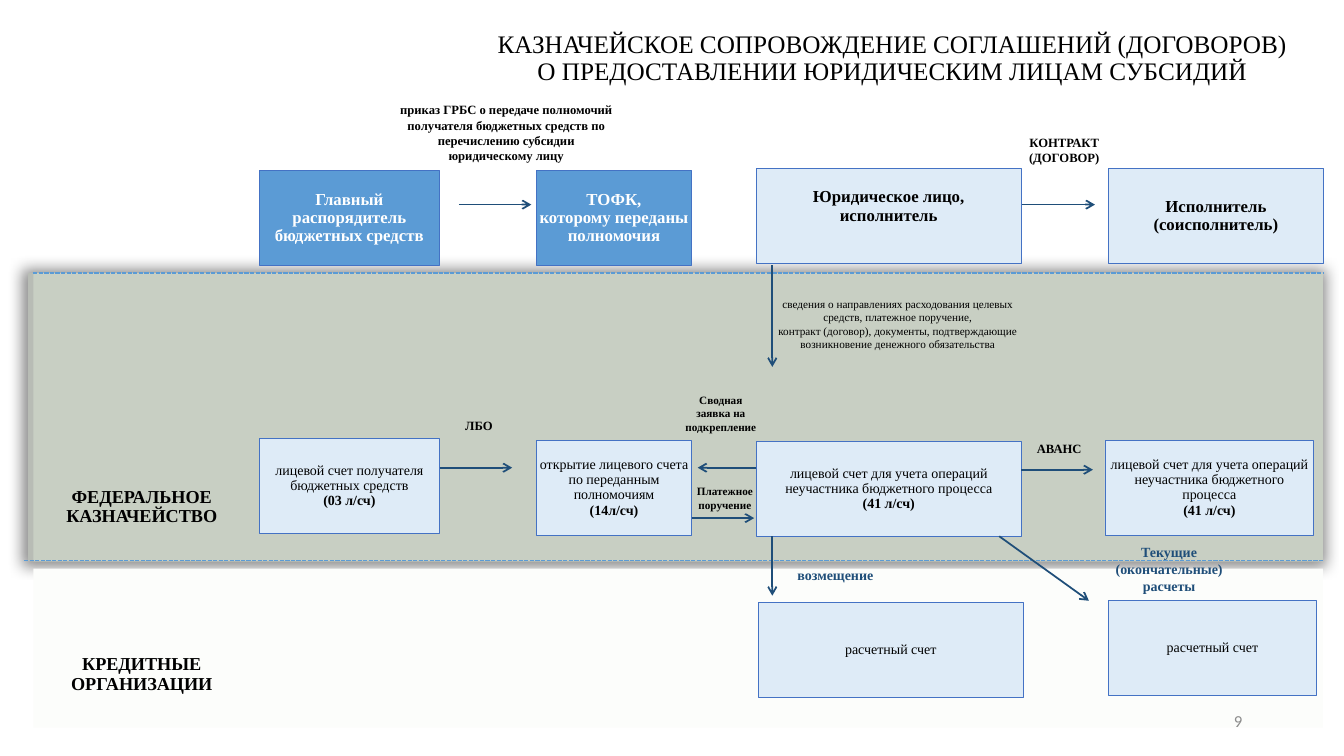
from lxml.etree import SubElement
from pptx import Presentation
from pptx.dml.color import RGBColor
from pptx.enum.dml import MSO_LINE
from pptx.enum.shapes import MSO_CONNECTOR, MSO_SHAPE
from pptx.enum.text import MSO_ANCHOR, PP_ALIGN
from pptx.oxml.ns import qn
from pptx.util import Inches, Pt

BLACK = RGBColor(0x00, 0x00, 0x00)
WHITE = RGBColor(0xFF, 0xFF, 0xFF)
GREY = RGBColor(0x8C, 0x8C, 0x8C)
NAVY = RGBColor(0x1F, 0x4E, 0x79)
BLUE = RGBColor(0x5B, 0x9B, 0xD5)
PALE = RGBColor(0xDE, 0xEB, 0xF7)
BORDER = RGBColor(0x44, 0x72, 0xC4)
SAGE = RGBColor(0xC8, 0xCF, 0xC3)
SAGE_EDGE = RGBColor(0xB8, 0xBC, 0xB5)
IVORY = RGBColor(0xFC, 0xFD, 0xFB)
SERIF = "Times New Roman"

# Text formats
HEADING = dict(size=Pt(18), bold=False, color=BLACK)
LANE = dict(size=Pt(13), bold=True, color=BLACK)
AGENCY = dict(size=Pt(12), bold=True, color=WHITE)
PARTY = dict(size=Pt(12), bold=True, color=BLACK)
ACCOUNT = dict(size=Pt(10), bold=False, color=BLACK)
LABEL = dict(size=Pt(9), bold=True, color=BLACK)
SMALL_LABEL = dict(size=Pt(8), bold=True, color=BLACK)
NOTE = dict(size=Pt(8), bold=False, color=BLACK)
PAYMENT = dict(size=Pt(10), bold=True, color=NAVY)
PAGE = dict(size=Pt(12), bold=False, color=GREY, name="Calibri")

# Lanes: left, top, width, height, fill, shadow
LANES = [
    (0.28, 2.71, 12.79, 2.86, SAGE_EDGE, True),
    (0.33, 5.64, 12.79, 1.58, IVORY, False),
    (0.33, 2.71, 12.79, 2.86, SAGE, False),
]
LANE_BORDERS = [(0.33, 2.71), (0.24, 5.56)]
LANE_END = 13.12

# Columns: left, width
COLUMNS = dict(chief=(2.57, 1.79), treasury=(5.32, 1.54),
               company=(7.5, 2.63), contractor=(10.99, 2.14))
BOX_HEIGHT = 0.94
OPERATIONS = "лицевой счет для учета операций неучастника бюджетного процесса"

# Boxes: column, shift, top, width change, fill, format, lines, account number
BOXES = [
    ("chief", 0, 1.69, 0, BLUE, AGENCY,
     ["Главный распорядитель бюджетных средств"], None),
    ("treasury", 0, 1.69, 0, BLUE, AGENCY,
     ["ТОФК,", "которому переданы полномочия"], None),
    ("company", 0, 1.67, 0, PALE, PARTY,
     ["Юридическое лицо,", "исполнитель"], None),
    ("contractor", 0, 1.67, 0, PALE, PARTY,
     ["Исполнитель (соисполнитель)"], None),
    ("chief", 0, 4.35, 0, PALE, ACCOUNT,
     ["лицевой счет получателя бюджетных средств"], "(03 л/сч)"),
    ("treasury", 0, 4.37, 0, PALE, ACCOUNT,
     ["открытие лицевого счета по переданным полномочиям"], "(14л/сч)"),
    ("company", 0, 4.38, 0, PALE, ACCOUNT, [OPERATIONS], "(41 л/сч)"),
    ("contractor", -0.03, 4.37, -0.07, PALE, ACCOUNT, [OPERATIONS], "(41 л/сч)"),
    ("company", 0.02, 5.98, 0, PALE, ACCOUNT, ["расчетный счет"], None),
    ("contractor", 0, 5.96, -0.07, PALE, ACCOUNT, ["расчетный счет"], None),
]
RAISED_BOX = "Юридическое лицо,"

# Labels: left, top, width, height, format, lines, bottom inset
LABELS = [
    (0.33, 4.56, 2.15, 0.94, LANE, ["ФЕДЕРАЛЬНОЕ КАЗНАЧЕЙСТВО"], 0.05),
    (0.33, 6.16, 2.15, 1.07, LANE, ["КРЕДИТНЫЕ ОРГАНИЗАЦИИ"], 0.05),
    (4.65, 0.26, 8.4, 0.65, HEADING,
     ["КАЗНАЧЕЙСКОЕ СОПРОВОЖДЕНИЕ СОГЛАШЕНИЙ (ДОГОВОРОВ)",
      "О ПРЕДОСТАВЛЕНИИ ЮРИДИЧЕСКИМ ЛИЦАМ СУБСИДИЙ"], 0.05),
    (3.82, 0.96, 2.4, 0.71, LABEL,
     ["приказ ГРБС о передаче полномочий получателя бюджетных средств по "
      "перечислению субсидии юридическому лицу"], 0.05),
    (10.03, 1.21, 1.05, 0.56, LABEL, ["КОНТРАКТ (ДОГОВОР)"], 0.05),
    (4.42, 4.04, 0.66, 0.52, LABEL, ["ЛБО"], 0.2),
    (10.08, 4.37, 0.85, 0.31, LABEL, ["АВАНС"], 0.2),
    (6.68, 3.82, 0.94, 0.56, SMALL_LABEL,
     ["Сводная", "заявка на подкрепление"], 0.05),
    (6.72, 4.66, 0.94, 0.56, SMALL_LABEL, ["Платежное поручение"], 0.05),
    (7.48, 2.9, 2.85, 0.63, NOTE,
     ["сведения о направлениях расходования целевых средств, платежное поручение,",
      "контракт (договор), документы, подтверждающие возникновение денежного "
      "обязательства"], 0.05),
    (7.76, 5.6, 1.05, 0.21, PAYMENT, ["возмещение"], 0.05),
    (10.8, 5.5, 1.59, 0.29, PAYMENT, ["Текущие (окончательные) расчеты"], 0.05),
    (9.42, 6.95, 3, 0.4, PAGE, ["9"], 0.05),
]

# Arrows: from x, from y, to x, to y
ARROWS = [
    (4.55, 2.03, 5.27, 2.03), (10.14, 2.03, 10.86, 2.03),
    (10.13, 4.66, 10.84, 4.66), (6.86, 5.14, 7.48, 5.14),
    (4.36, 4.64, 5.08, 4.64), (7.5, 4.64, 6.92, 4.64),
    (9.91, 5.32, 10.8, 5.96), (7.66, 2.63, 7.66, 3.64),
    (7.66, 5.32, 7.66, 5.91),
]


def add_lines(frame, lines, text_format, spacing, account=None):
    """Fill a text frame with centred paragraphs, the account number in bold."""
    frame.word_wrap = True
    frame.vertical_anchor = MSO_ANCHOR.MIDDLE
    rows = [(line, text_format["bold"]) for line in lines]
    if account:
        rows.append((account, True))
    for index, (line, bold) in enumerate(rows):
        paragraph = frame.add_paragraph() if index else frame.paragraphs[0]
        paragraph.alignment = PP_ALIGN.RIGHT if text_format is PAGE else PP_ALIGN.CENTER
        paragraph.line_spacing = spacing
        run = paragraph.add_run()
        run.text = line
        for key, value in {"name": SERIF, **text_format, "bold": bold}.items():
            if key == "color":
                run.font.color.rgb = value
            else:
                setattr(run.font, key, value)


def add_rectangle(shapes, left, top, width, height, fill, border=None):
    rectangle = shapes.add_shape(MSO_SHAPE.RECTANGLE, *map(Inches, (left, top, width, height)))
    rectangle.shadow.inherit = False
    rectangle.fill.solid()
    rectangle.fill.fore_color.rgb = fill
    if border:
        rectangle.line.color.rgb = border
        rectangle.line.width = Pt(0.5)
    else:
        rectangle.line.fill.background()
    return rectangle


def add_glow_shadow(lane):
    """Give a lane a soft dark shadow on every side."""
    effects = lane._element.spPr.find(qn("a:effectLst"))
    shadow = SubElement(effects, qn("a:outerShdw"), blurRad=str(Inches(0.14)),
                        dist="0", sx="101000", sy="103000", algn="ctr", rotWithShape="0")
    black = SubElement(shadow, qn("a:srgbClr"), val="000000")
    SubElement(black, qn("a:alpha"), val="45000")


def add_line(shapes, ends, color, width):
    line = shapes.add_connector(MSO_CONNECTOR.STRAIGHT, *map(Inches, ends))
    line.line.color.rgb = color
    line.line.width = Pt(width)
    SubElement(line._element.spPr, qn("a:effectLst"))
    return line


def main():
    deck = Presentation()
    deck.slide_width, deck.slide_height = Inches(13.33), Inches(7.5)
    shapes = deck.slides.add_slide(deck.slide_layouts[6]).shapes

    for *place, fill, shadowed in LANES:
        lane = add_rectangle(shapes, *place, fill)
        if shadowed:
            add_glow_shadow(lane)

    for left, y in LANE_BORDERS:
        border = add_line(shapes, (left, y, LANE_END, y), BLUE, 1)
        border.line.dash_style = MSO_LINE.SQUARE_DOT

    for column, shift, top, change, fill, text_format, lines, account in BOXES:
        left, width = COLUMNS[column]
        box = add_rectangle(shapes, left + shift, top, width + change, BOX_HEIGHT, fill, BORDER)
        frame = box.text_frame
        for side in ("left", "top", "right", "bottom"):
            setattr(frame, f"margin_{side}", Inches(0.01))
        if lines[0] == RAISED_BOX:
            frame.margin_bottom = Inches(0.19)
        add_lines(frame, lines, text_format, 0.9, account)

    for ends in ARROWS:
        arrow = add_line(shapes, ends, NAVY, 1.25)
        SubElement(arrow.line._get_or_add_ln(), qn("a:tailEnd"), type="arrow")

    for *place, text_format, lines, bottom in LABELS:
        frame = shapes.add_textbox(*map(Inches, place)).text_frame
        frame.margin_bottom = Inches(bottom)
        add_lines(frame, lines, text_format, 0.9 if text_format in (HEADING, LANE) else 1.0)

    deck.save("out.pptx")


if __name__ == "__main__":
    main()
